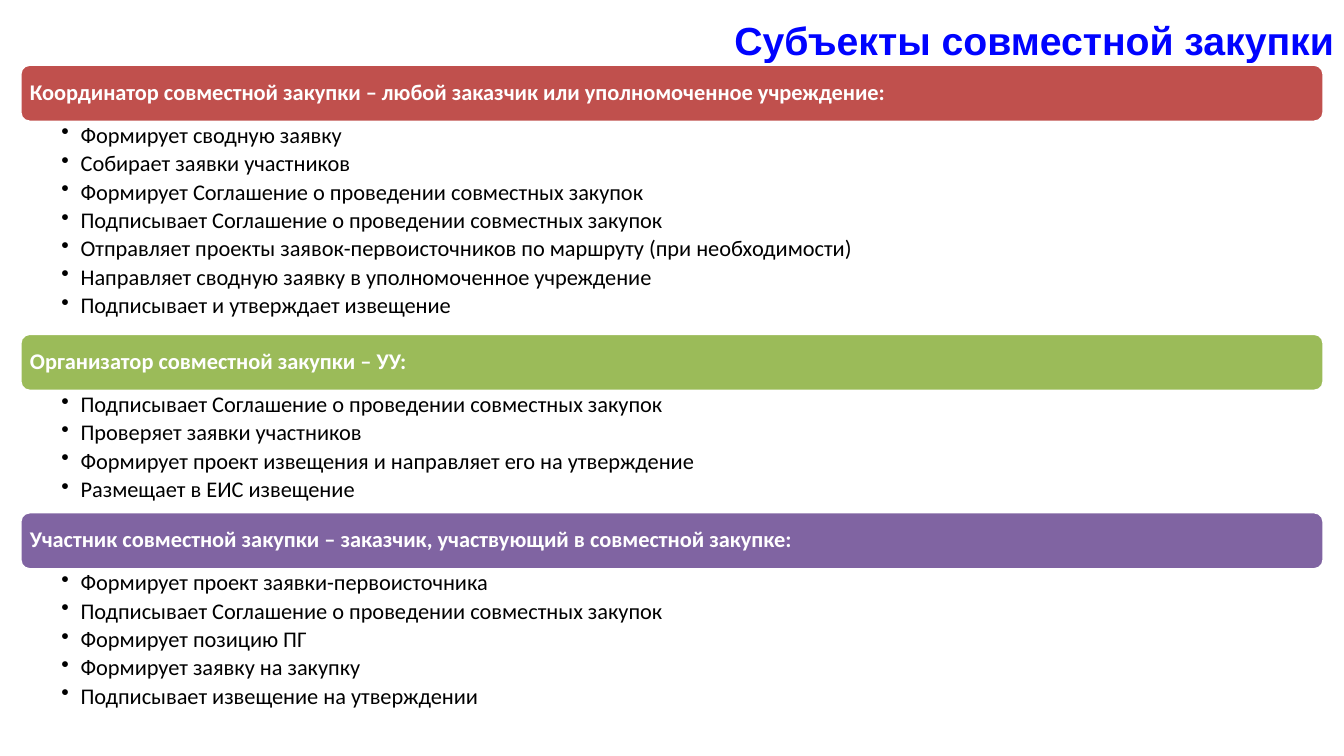
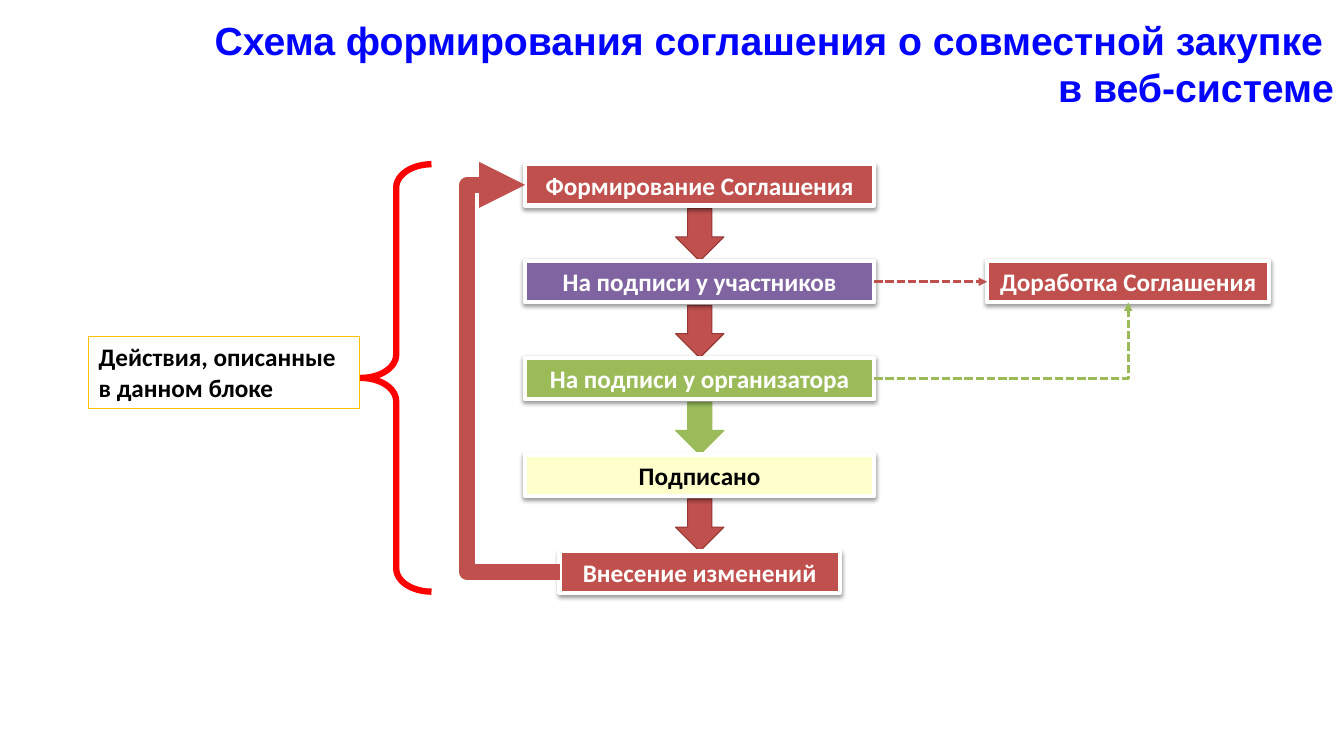
"""Build two slides on the roles and the workflow of a joint purchase."""
import dataclasses

import lxml.etree
import pptx
import pptx.dml.color
import pptx.enum.dml
import pptx.enum.shapes
import pptx.enum.text
import pptx.oxml.ns
import pptx.util

Inches = pptx.util.Inches
Pt = pptx.util.Pt
SHAPE = pptx.enum.shapes.MSO_SHAPE
LINK = pptx.enum.shapes.MSO_CONNECTOR
ALIGN = pptx.enum.text.PP_ALIGN
ANCHOR = pptx.enum.text.MSO_ANCHOR
TOP, LEFT, BOTTOM, RIGHT = range(4)


@dataclasses.dataclass(frozen=True)
class Theme:
    """Colours, fonts and type sizes shared by the slides."""
    blue: str = "0003FF"
    red: str = "C0504D"
    dark: str = "953735"
    green: str = "9BBB59"
    purple: str = "8064A2"
    cream: str = "FFFFCC"
    gold: str = "FFC000"
    bright: str = "FF0000"
    white: str = "FFFFFF"
    black: str = "000000"
    head: str = "Arial"
    body: str = "Calibri"
    title: int = 28
    step: int = 18
    item: int = 16


THEME = Theme()
WIDTH = 13.33

ROLES = [
    (THEME.red,
     "Координатор совместной закупки – любой заказчик или уполномоченное учреждение:",
     ["Формирует сводную заявку",
      "Собирает заявки участников",
      "Формирует Соглашение о проведении совместных закупок",
      "Подписывает Соглашение о проведении совместных закупок",
      "Отправляет проекты заявок-первоисточников по маршруту (при необходимости)",
      "Направляет сводную заявку в уполномоченное учреждение",
      "Подписывает и утверждает извещение"]),
    (THEME.green,
     "Организатор совместной закупки – УУ:",
     ["Подписывает Соглашение о проведении совместных закупок",
      "Проверяет заявки участников",
      "Формирует проект извещения и направляет его на утверждение",
      "Размещает в ЕИС извещение"]),
    (THEME.purple,
     "Участник совместной закупки – заказчик, участвующий в совместной закупке:",
     ["Формирует проект заявки-первоисточника",
      "Подписывает Соглашение о проведении совместных закупок",
      "Формирует позицию ПГ",
      "Формирует заявку на закупку",
      "Подписывает извещение на утверждении"]),
]

STEPS = [
    ("Формирование Соглашения", THEME.red, THEME.white, 3.46),
    ("На подписи у участников", THEME.purple, THEME.white, 3.46),
    ("На подписи у организатора", THEME.green, THEME.white, 3.46),
    ("Подписано", THEME.cream, THEME.black, 3.46),
    ("Внесение изменений", THEME.red, THEME.white, 2.78),
]


def assign(item, values):
    """Set attributes of an object from a dict."""
    for name, value in values.items():
        setattr(item, name, value)


def add_node(parent, tag, **attrs):
    """Append a drawing element to an XML parent."""
    return lxml.etree.SubElement(parent, pptx.oxml.ns.qn(tag), attrs)


def tint(part, colour):
    """Give a fill a solid colour."""
    part.solid()
    part.fore_color.rgb = pptx.dml.color.RGBColor.from_string(colour)


def stroke(shape, colour, width):
    """Set the colour and width of an outline."""
    tint(shape.line.fill, colour)
    shape.line.width = Pt(width)


def place(shape, left, top, width, height):
    """Move and size a shape in inches."""
    assign(shape, {"left": Inches(left), "top": Inches(top),
                   "width": Inches(width), "height": Inches(height)})


def write(shape, lines, face, size, colour, bold=True, align=ALIGN.LEFT,
          anchor=ANCHOR.MIDDLE, space=None, bullet=False, **frame):
    """Fill a shape with formatted paragraphs."""
    text = shape.text_frame
    assign(text, {"word_wrap": True, "vertical_anchor": anchor,
                  "auto_size": pptx.enum.text.MSO_AUTO_SIZE.NONE, **frame})
    for index, line in enumerate(lines):
        para = text.add_paragraph() if index else text.paragraphs[0]
        para.text = line
        assign(para, {"alignment": align, "line_spacing": space})
        if bullet:
            para.space_after = Pt(3)
            props = para._p.get_or_add_pPr()
            props.set("marL", str(Inches(0.19)))
            props.set("indent", str(-Inches(0.19)))
            add_node(props, "a:buChar", char="•")
        assign(para.font, {"name": face, "size": Pt(size), "bold": bold})
        tint(para.font.fill, colour)


def add_page(deck, lines):
    """Add a slide with the shared right-aligned title."""
    slide = deck.slides.add_slide(deck.slide_layouts[5])
    place(slide.shapes.title, 0, 0.11, WIDTH, 0.1 + 0.47 * len(lines))
    write(slide.shapes.title, lines, THEME.head, THEME.title, THEME.blue,
          align=ALIGN.RIGHT, anchor=ANCHOR.TOP)
    return slide


def add_form(slide, kind, area, fill, edge, weight):
    """Add a flat preset shape, unfilled when fill is None."""
    shape = slide.shapes.add_shape(kind, *map(Inches, area))
    shape.shadow.inherit = False
    if fill:
        tint(shape.fill, fill)
    else:
        shape.fill.background()
    stroke(shape, edge, weight)
    return shape


def add_role(slide, top, colour, label, items):
    """Add a role band with its bullet list and return the lower edge."""
    left, width, depth = 0.2, 12.93, 0.57
    band = add_form(slide, SHAPE.ROUNDED_RECTANGLE, (left, top, width, depth),
                    colour, THEME.white, 2)
    write(band, [label], THEME.body, THEME.item, THEME.white, space=0.9,
          margin_left=Inches(0.07))
    height = 0.3 * len(items)
    duties = slide.shapes.add_textbox(
        *map(Inches, (left, top + depth, width, height)))
    write(duties, items, THEME.body, THEME.item, THEME.black, bold=False,
          anchor=ANCHOR.TOP, space=0.9, bullet=True,
          margin_left=Inches(0.41), margin_right=Inches(0.12),
          margin_top=Inches(0.02), margin_bottom=Inches(0.02))
    return top + depth + height


def add_step(slide, label, area, fill, ink):
    """Add a workflow box with a soft shadow."""
    box = add_form(slide, SHAPE.RECTANGLE, area, fill, THEME.white, 3)
    write(box, [label], THEME.body, THEME.step, ink, align=ALIGN.CENTER)
    effects = box.element.spPr.find(pptx.oxml.ns.qn("a:effectLst"))
    shade = add_node(effects, "a:outerShdw", blurRad=str(Pt(3.1)),
                     dist=str(Pt(1.6)), dir="5400000", rotWithShape="0")
    black = add_node(shade, "a:srgbClr", val=THEME.black)
    add_node(black, "a:alpha", val="38000")
    return box


def add_link(slide, start, end, colour, width, kind=LINK.STRAIGHT,
             dash=None, preset=None, bend=None):
    """Join two box sides with an arrow."""
    link = slide.shapes.add_connector(kind, 0, 0, 0, 0)
    link.begin_connect(*start)
    link.end_connect(*end)
    stroke(link, colour, width)
    if dash:
        link.line.dash_style = dash
    props = link.element.spPr
    shape = props.find(pptx.oxml.ns.qn("a:prstGeom"))
    if preset:
        shape.set("prst", preset)
    if bend:
        add_node(shape.find(pptx.oxml.ns.qn("a:avLst")), "a:gd",
                 name="adj1", fmla=f"val {round(bend * 100000)}")
    line = props.find(pptx.oxml.ns.qn("a:ln"))
    add_node(line, "a:round")
    add_node(line, "a:tailEnd", type="triangle")
    add_node(props, "a:effectLst")


def build_roles(deck):
    """Build the slide that lists the roles."""
    slide = add_page(deck, ["Субъекты совместной закупки"])
    top = 0.64
    for role in ROLES:
        top = add_role(slide, top, *role)


def build_flow(deck):
    """Build the slide with the agreement workflow."""
    slide = add_page(deck, ["Схема формирования соглашения о совместной закупке ",
                            "в веб-системе"])
    centre, first, pitch, height = 6.94, 1.63, 0.96, 0.41
    tops = [first + pitch * index for index in range(len(STEPS))]
    edges = [(THEME.red, THEME.dark), (THEME.red, THEME.dark),
             (THEME.green, THEME.green), (THEME.red, THEME.dark)]
    for top, (fill, edge) in zip(tops, edges):
        add_form(slide, SHAPE.DOWN_ARROW,
                 (centre - 0.24, top + 0.44, 0.48, 0.52), fill, edge, 0.75)
    boxes = [add_step(slide, label, (centre - width / 2, top, width, height),
                      fill, ink)
             for top, (label, fill, ink, width) in zip(tops, STEPS)]
    rework = add_step(slide, "Доработка Соглашения",
                      (9.79, tops[1], 2.8, height), THEME.red, THEME.white)

    dash = pptx.enum.dml.MSO_LINE.SQUARE_DOT
    add_link(slide, (boxes[4], LEFT), (boxes[0], LEFT), THEME.red, 11,
             LINK.ELBOW, bend=2.7)
    add_link(slide, (boxes[1], RIGHT), (rework, LEFT), THEME.red, 2, dash=dash)
    add_link(slide, (boxes[2], RIGHT), (rework, BOTTOM), THEME.green, 2,
             LINK.ELBOW, dash=dash, preset="bentConnector2")

    brace = add_form(slide, SHAPE.LEFT_BRACE, (3.58, first, 0.7, 4.24),
                     None, THEME.bright, 4.5)
    brace.adjustments[0] = 0.33
    note = add_form(slide, SHAPE.RECTANGLE, (0.88, 3.34, 2.69, 0.71),
                    THEME.white, THEME.gold, 0.75)
    write(note, ["Действия, описанные в данном блоке"], THEME.body, THEME.step,
          THEME.black, anchor=ANCHOR.TOP)


def main():
    """Create and save the deck."""
    deck = pptx.Presentation()
    assign(deck, {"slide_width": Inches(WIDTH), "slide_height": Inches(7.5)})
    build_roles(deck)
    build_flow(deck)
    deck.save("out.pptx")


if __name__ == "__main__":
    main()
